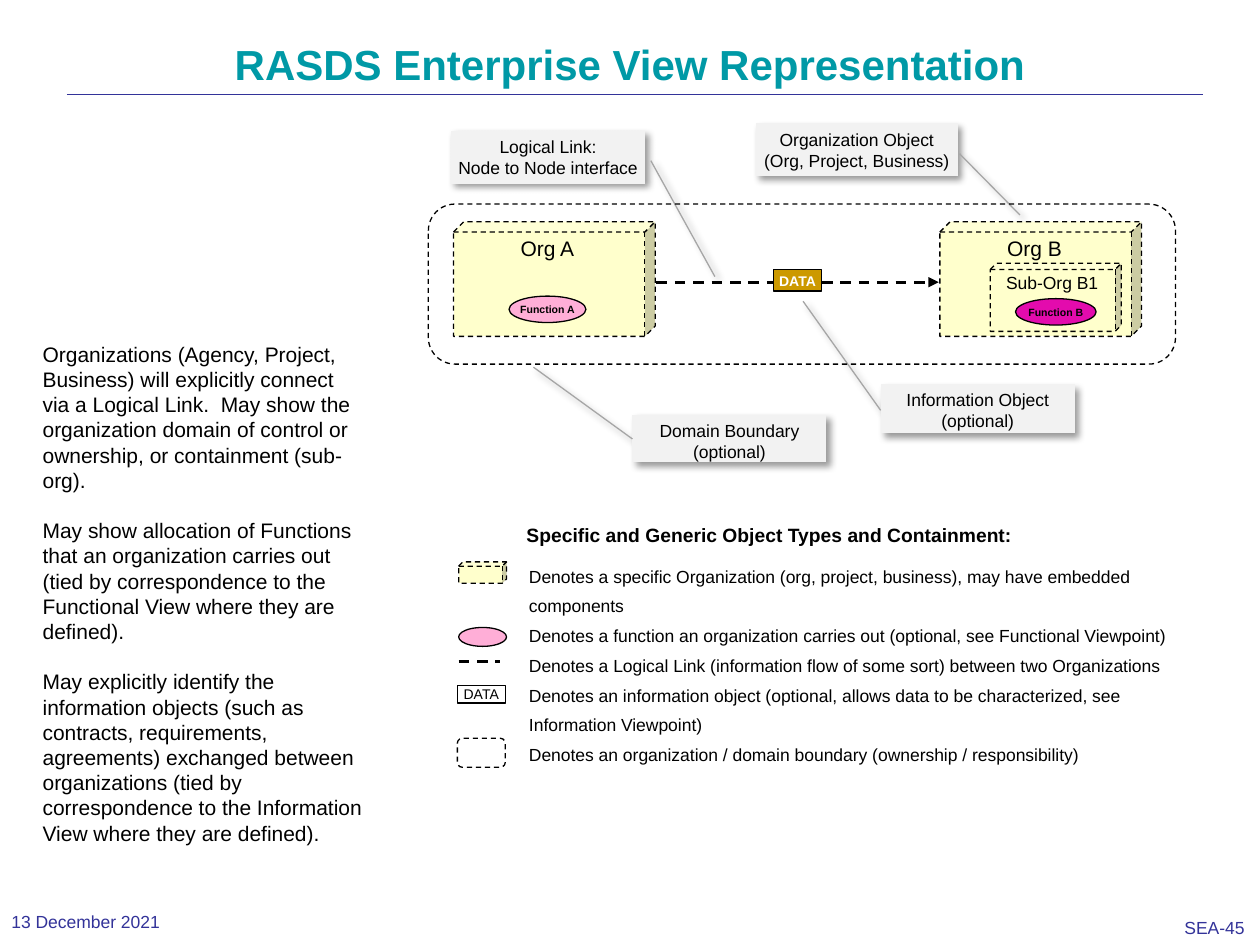
from lxml import etree
from pptx import Presentation
from pptx import util as u
from pptx.dml.color import RGBColor
from pptx.enum import dml, shapes, text
from pptx.oxml.ns import qn

COLORS = {
    "title": "0099A6", "navy": "333399", "black": "000000", "white": "FFFFFF",
    "organization": "FFFFCC", "data": "CC9900", "function": "FFAED7",
    "function_b": "E30BAD", "callout": "F2F2F2", "leader": "A6A6A6",
}
SHAPE = shapes.MSO_SHAPE
CENTER = text.PP_ALIGN.CENTER
MIDDLE = text.MSO_ANCHOR.MIDDLE


def color(name):
    return RGBColor.from_string(COLORS[name])


class Diagram:
    font_name = "Arial"

    def __init__(self, slide):
        self.slide = slide

    def label(self, shape, lines, size, ink="black", bold=False, align=None,
              anchor=text.MSO_ANCHOR.TOP, inset=(0.1, 0.05), wrap=True,
              spacing=None, gap=0):
        """Fill a shape with paragraphs; inset is (horizontal, vertical) and gap is in points."""
        frame = shape.text_frame
        frame.text = "\n".join(lines)
        frame.word_wrap = wrap
        frame.vertical_anchor = anchor
        frame.margin_left = frame.margin_right = u.Inches(inset[0])
        frame.margin_top = frame.margin_bottom = u.Inches(inset[1])
        for index, paragraph in enumerate(frame.paragraphs):
            paragraph.alignment = align or text.PP_ALIGN.LEFT
            if spacing:
                paragraph.line_spacing = spacing
            if gap and index:
                paragraph.space_before = u.Pt(gap)
            for run in paragraph.runs:
                run.font.name = self.font_name
                run.font.size = u.Pt(size)
                run.font.bold = bold
                run.font.color.rgb = color(ink)

    def text_box(self, box, lines, size, **style):
        shape = self.slide.shapes.add_textbox(*map(u.Inches, box))
        self.label(shape, lines, size, **style)

    def shape(self, kind, box, fill=None, line="black", dashed=False, adjustments=()):
        shape = self.slide.shapes.add_shape(kind, *map(u.Inches, box))
        shape.shadow.inherit = False
        for index, value in enumerate(adjustments):
            shape.adjustments[index] = value
        if fill:
            shape.fill.solid()
            shape.fill.fore_color.rgb = color(fill)
        else:
            shape.fill.background()
        shape.line.color.rgb = color(line)
        shape.line.width = u.Pt(0.75)
        if dashed:
            shape.line.dash_style = dml.MSO_LINE.DASH
        return shape

    def cube(self, box, depth=0.09):
        self.shape(SHAPE.CUBE, box, "organization", dashed=True, adjustments=[depth])

    def function(self, box, name, fill):
        shape = self.shape(SHAPE.OVAL, box, fill)
        self.label(shape, [name], 6, bold=True, align=CENTER, anchor=MIDDLE, wrap=False)

    def callout(self, box, lines, leader):
        """Add a mirrored note; leader is y1, x1, y2, x2 as fractions of the box."""
        shape = self.shape(SHAPE.LINE_CALLOUT_1_NO_BORDER, box, "callout", "leader",
                           adjustments=leader)
        properties = shape._element.spPr
        properties.find(qn("a:xfrm")).set("flipH", "1")
        shadow = etree.SubElement(
            properties.find(qn("a:effectLst")), qn("a:outerShdw"),
            blurRad=str(u.Pt(4)), dist=str(u.Pt(3)), dir="2700000",
            algn="tl", rotWithShape="0")
        tint = etree.SubElement(shadow, qn("a:srgbClr"), val=COLORS["black"])
        etree.SubElement(tint, qn("a:alpha"), val="40000")
        self.label(shape, lines, 10, align=CENTER, inset=(0.04, 0.04))

    def line(self, start, end, ink="black", width=1.5, dashed=True, arrow=False):
        connector = self.slide.shapes.add_connector(
            shapes.MSO_CONNECTOR.STRAIGHT, *map(u.Inches, start + end))
        connector.line.color.rgb = color(ink)
        connector.line.width = u.Pt(width)
        if dashed:
            connector.line.dash_style = dml.MSO_LINE.DASH
        properties = connector._element.spPr
        if arrow:
            etree.SubElement(properties.find(qn("a:ln")), qn("a:tailEnd"), type="triangle")
        etree.SubElement(properties, qn("a:effectLst"))


def main():
    presentation = Presentation()
    presentation.slide_width = u.Inches(10)
    presentation.slide_height = u.Inches(7.5)
    diagram = Diagram(presentation.slides.add_slide(presentation.slide_layouts[6]))

    # Title and footer
    diagram.line((0.53, 0.75), (9.55, 0.75), "navy", 0.13, dashed=False)
    diagram.text_box((9.31, 7.24, 0.68, 0.26), ["SEA-45"], 10, ink="navy",
                     inset=(0.09, 0.04), wrap=False)
    diagram.text_box((0.5, 0.3, 9, 1.25), ["RASDS Enterprise View Representation"], 24,
                     ink="title", bold=True, align=CENTER, spacing=0.9)
    diagram.text_box((0, 7.17, 1.89, 0.29), ["13 December 2021"], 10, ink="navy",
                     anchor=MIDDLE, inset=(0.09, 0.05), wrap=False)

    # Organizations and the logical link between them
    for left in (3.6, 7.46):
        diagram.cube((left, 1.76, 1.6, 0.91))
    diagram.line((5.21, 2.24), (7.45, 2.24), arrow=True)
    data = diagram.shape(SHAPE.RECTANGLE, (6.14, 2.14, 0.38, 0.17), "data")
    diagram.label(data, ["DATA"], 8, ink="white", bold=True, align=CENTER, inset=(0.02, 0.02))

    for box, lines, leader in (
        ((3.58, 1.04, 1.54, 0.42), ["Logical Link:\vNode to Node interface"],
         (0.56, -0.03, 2.75, -0.36)),
        ((5.02, 3.29, 1.54, 0.38), ["Domain Boundary", "(optional)"],
         (0.51, 1, -0.99, 1.51)),
        ((6, 0.98, 1.6, 0.42), ["Organization Object", "(Org, Project, Business)"],
         (0.57, -0.01, 1.73, -0.31)),
        ((6.99, 3.05, 1.54, 0.39), ["Information Object", "(optional)"],
         (0.53, 1, -1.69, 1.4)),
    ):
        diagram.callout(box, lines, leader)

    # Explanations
    diagram.text_box((4.1, 4.37, 5.56, 1.74), [
        "Denotes a specific Organization (org, project, business), may have embedded components",
        "Denotes a function an organization carries out (optional, see Functional Viewpoint)",
        "Denotes a Logical Link (information flow of some sort) between two Organizations",
        "Denotes an information object (optional, allows data to be characterized, "
        "see Information Viewpoint)",
        "Denotes an organization / domain boundary (ownership / responsibility)",
    ], 10, spacing=u.Pt(17))
    diagram.text_box((4.08, 4.1, 4.09, 0.29),
                     ["Specific and Generic Object Types and Containment:"], 11,
                     bold=True, wrap=False)
    diagram.text_box((0.24, 2.66, 2.77, 4.34), [
        "Organizations (Agency, Project, Business) will explicitly connect via a Logical Link.  "
        "May show the organization domain of control or ownership, or containment (sub-org).",
        "May show allocation of Functions that an organization carries out (tied by "
        "correspondence to the Functional View where they are defined).",
        "May explicitly identify the information objects (such as contracts, requirements, "
        "agreements) exchanged between organizations (tied by correspondence to the "
        "Information View where they are defined).",
    ], 12, gap=14.4)

    # Organization contents
    diagram.cube((7.86, 2.09, 1.04, 0.54))
    for box, name, size in (
        ((4.03, 1.82, 0.63, 0.3), "Org A", 12),
        ((7.89, 1.82, 0.64, 0.3), "Org B", 12),
        ((7.88, 2.11, 0.94, 0.27), "Sub-Org B1", 10),
    ):
        diagram.text_box(box, [name], size, align=CENTER, wrap=False)
    diagram.function((4.04, 2.35, 0.61, 0.21), "Function A", "function")
    diagram.function((8.06, 2.37, 0.64, 0.21), "Function B", "function_b")

    # Legend symbols
    diagram.cube((3.64, 4.46, 0.38, 0.17), depth=0.2)
    diagram.shape(SHAPE.OVAL, (3.64, 4.98, 0.38, 0.15), "function")
    diagram.line((3.64, 5.25), (3.97, 5.25))
    data = diagram.shape(SHAPE.RECTANGLE, (3.63, 5.44, 0.38, 0.14), "white")
    diagram.label(data, ["DATA"], 8, align=CENTER, anchor=MIDDLE, inset=(0, 0.05))
    diagram.shape(SHAPE.ROUNDED_RECTANGLE, (3.63, 5.86, 0.38, 0.23), "white", dashed=True)

    # Domain boundary
    diagram.shape(SHAPE.ROUNDED_RECTANGLE, (3.4, 1.62, 5.93, 1.27), dashed=True)

    presentation.save("out.pptx")


if __name__ == "__main__":
    main()
